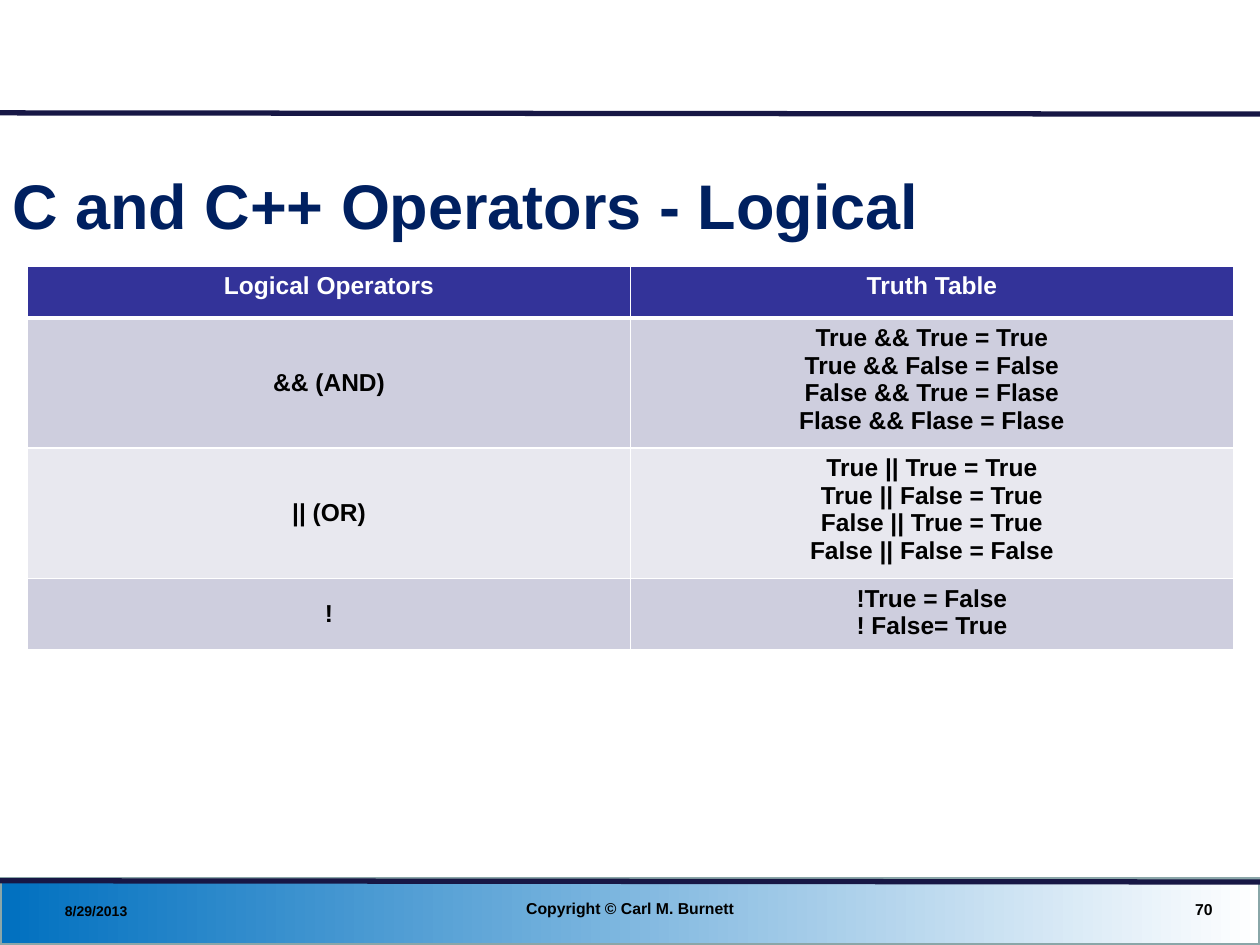
import pptx
import pptx.dml.color
import pptx.enum.dml
import pptx.enum.shapes
import pptx.enum.text
import pptx.oxml
import pptx.oxml.ns
import pptx.util

Pt = pptx.util.Pt
RGBColor = pptx.dml.color.RGBColor
ALIGN = pptx.enum.text.PP_ALIGN
ANCHOR = pptx.enum.text.MSO_ANCHOR

WHITE = RGBColor(0xFF, 0xFF, 0xFF)
BLACK = RGBColor(0, 0, 0)
TITLE_NAVY = RGBColor(0x00, 0x20, 0x60)
RULE_NAVY = RGBColor(0x17, 0x17, 0x45)
FOOTER_BLUE = RGBColor(0x00, 0x70, 0xC0)
FOOTER_EDGE = RGBColor(0x8A, 0xA6, 0xA8)
HEADER_BLUE = RGBColor(0x33, 0x33, 0x99)
BAND_DARK = RGBColor(0xCE, 0xCE, 0xDE)
BAND_LIGHT = RGBColor(0xE8, 0xE8, 0xEF)

PAGE_WIDTH, PAGE_HEIGHT = 720, 540
ROW_HEIGHTS = [29.5, 70, 70, 38.5]
OPERATORS = [
    ("Logical Operators", "Truth Table"),
    ("&& (AND)", "True && True = True\nTrue && False = False\n"
                 "False && True = Flase\nFlase && Flase = Flase"),
    ("|| (OR)", "True || True = True\nTrue || False = True\n"
                "False || True = True\nFalse || False = False"),
    ("!", "!True = False\n! False= True"),
]


def write_text(frame, text, size=14, color=BLACK, align=ALIGN.LEFT):
    """Fill a text frame with one bold paragraph per line of text."""
    frame.text = text
    for para in frame.paragraphs:
        para.alignment = align
        for span in para.runs:
            span.font.name = "Arial"
            span.font.size = Pt(size)
            span.font.bold = True
            span.font.color.rgb = color


def add_cell_borders(cell, bottom_width):
    properties = cell._tc.get_or_add_tcPr()
    for side, width in (("L", 1), ("R", 1), ("T", 1), ("B", bottom_width)):
        properties.append(pptx.oxml.parse_xml(
            f'<a:ln{side} {pptx.oxml.ns.nsdecls("a")} w="{Pt(width)}">'
            f'<a:solidFill><a:srgbClr val="{WHITE}"/></a:solidFill></a:ln{side}>'))


class SlideBuilder:
    def __init__(self, page):
        self.page = page

    def gradient_bar(self, left, top, width, height, start, end, edge):
        bar = self.page.shapes.add_shape(
            pptx.enum.shapes.MSO_SHAPE.RECTANGLE,
            Pt(left), Pt(top), Pt(width), Pt(height))
        bar.shadow.inherit = False
        bar.fill.gradient()
        bar.fill.gradient_angle = 0
        for stop, color, position in zip(bar.fill.gradient_stops, (start, end), (0, 1)):
            stop.color.rgb = color
            stop.position = position
        bar.line.color.rgb = edge
        bar.line.width = Pt(2)

    def rule(self, start_y, end_y):
        """Draw a line across the whole page."""
        line = self.page.shapes.add_connector(
            pptx.enum.shapes.MSO_CONNECTOR.STRAIGHT,
            Pt(0), Pt(start_y), Pt(PAGE_WIDTH), Pt(end_y))
        line.line.color.rgb = RULE_NAVY
        line.line.width = Pt(3)
        line._element.spPr.append(pptx.oxml.parse_xml(
            f'<a:effectLst {pptx.oxml.ns.nsdecls("a")}/>'))

    def label(self, text, left, top, width, height, **style):
        box = self.page.shapes.add_textbox(Pt(left), Pt(top), Pt(width), Pt(height))
        box.text_frame.word_wrap = True
        box.text_frame.vertical_anchor = ANCHOR.MIDDLE
        write_text(box.text_frame, text, **style)

    def table(self, rows, left, top, width, heights):
        table = self.page.shapes.add_table(
            len(rows), len(rows[0]), Pt(left), Pt(top), Pt(width), Pt(sum(heights))).table
        for row_index, texts in enumerate(rows):
            table.rows[row_index].height = Pt(heights[row_index])
            is_header = row_index == 0
            if is_header:
                fill = HEADER_BLUE
            else:
                fill = BAND_DARK if row_index % 2 else BAND_LIGHT
            for column_index, text in enumerate(texts):
                cell = table.cell(row_index, column_index)
                add_cell_borders(cell, 3 if is_header else 1)
                cell.fill.solid()
                cell.fill.fore_color.rgb = fill
                if column_index == 0 and not is_header:
                    cell.vertical_anchor = ANCHOR.MIDDLE
                write_text(cell.text_frame, text, align=ALIGN.CENTER,
                           color=WHITE if is_header else BLACK)


def main():
    deck = pptx.Presentation()
    deck.slide_width, deck.slide_height = Pt(PAGE_WIDTH), Pt(PAGE_HEIGHT)
    builder = SlideBuilder(deck.slides.add_slide(deck.slide_layouts[6]))

    builder.gradient_bar(0, 502, PAGE_WIDTH, 38, FOOTER_BLUE, WHITE, FOOTER_EDGE)
    builder.rule(503.3, 504)
    builder.rule(64.5, 65.2)
    builder.label("C and C++ Operators - Logical", 0, 82, 690, 70,
                  size=36, color=TITLE_NAVY)
    builder.table(OPERATORS, 15.8, 152.2, 689, ROW_HEIGHTS)
    builder.label("8/29/2013", 30, 511, 168, 19.5, size=8)
    builder.label("70", 532, 509, 168, 21, size=9, align=ALIGN.RIGHT)
    builder.label("Copyright © Carl M. Burnett", 246, 508.5, 228, 21,
                  size=9, align=ALIGN.CENTER)
    deck.save("out.pptx")


if __name__ == "__main__":
    main()
